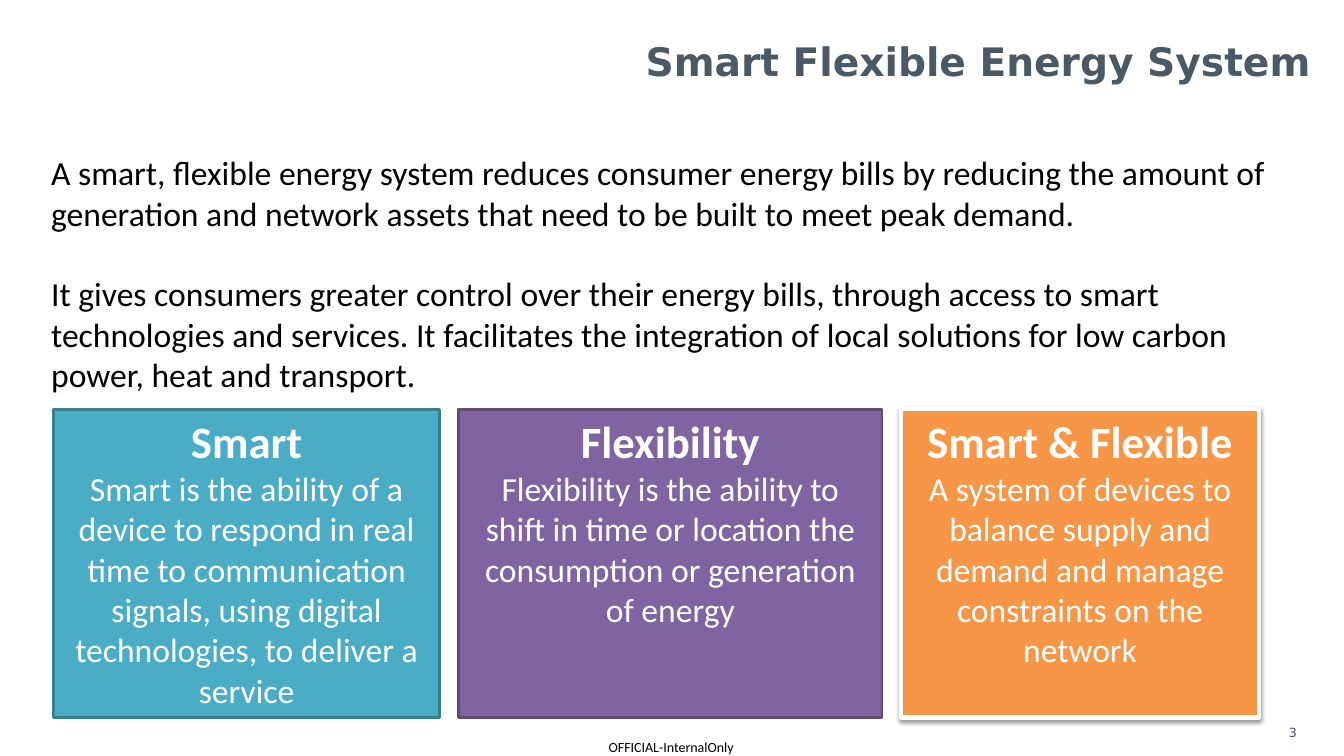
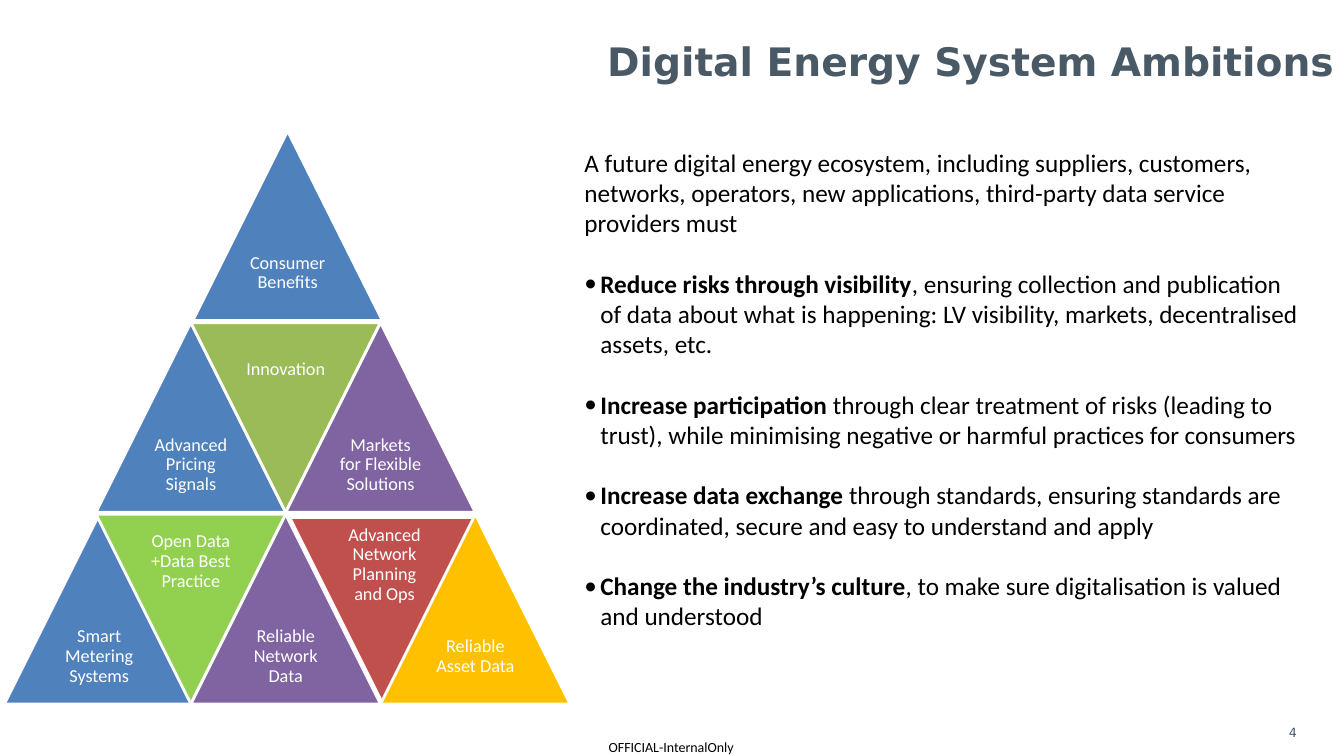
from dataclasses import dataclass
from itertools import accumulate

from lxml.etree import SubElement
from pptx import Presentation
from pptx.dml.color import RGBColor as RGB
from pptx.enum.shapes import MSO_SHAPE as SHAPE
from pptx.enum.text import MSO_ANCHOR as ANCHOR, PP_ALIGN as ALIGN
from pptx.oxml.ns import qn
from pptx.util import Cm, Pt


@dataclass(frozen=True)
class Theme:
    """Colours, fonts and type sizes shared by the slides."""
    body_font: str = "Calibri"
    title_font: str = "DejaVu Sans"
    black: str = "000000"
    white: str = "FFFFFF"
    slate: str = "495965"
    teal: str = "4BACC6"
    teal_edge: str = "377F92"
    purple: str = "8064A2"
    purple_edge: str = "5F4A78"
    orange: str = "F79646"
    blue: str = "4F81BD"
    green: str = "9BBB59"
    lime: str = "92D050"
    red: str = "C0504D"
    amber: str = "FFC000"
    title: int = 28
    heading: int = 32
    lead: int = 24
    body: int = 18
    label: int = 13
    footer: int = 10
    number: int = 9


T = Theme()

INTRO = [
    "A smart, flexible energy system reduces consumer energy bills by reducing the amount of "
    "generation and network assets that need to be built to meet peak demand.",
    "It gives consumers greater control over their energy bills, through access to smart "
    "technologies and services. It facilitates the integration of local solutions for low carbon "
    "power, heat and transport.",
]

CARDS = [
    (9.73, T.teal, T.teal_edge, 2, "Smart",
     "Smart is the ability of a device to respond in real time to communication signals, "
     "using digital technologies, to deliver a service"),
    (10.67, T.purple, T.purple_edge, 2, "Flexibility",
     "Flexibility is the ability to shift in time or location the consumption or generation "
     "of energy"),
    (9.02, T.orange, T.white, 3, "Smart & Flexible",
     "A system of devices to balance supply and demand and manage constraints on the network"),
]

PYRAMID = [
    [("Consumer Benefits", T.blue, 0.05, 0)],
    [("Advanced Pricing Signals", T.blue, 0, 0),
     ("Innovation", T.green, 0, 0),
     ("Markets for Flexible Solutions", T.purple, 0, 0)],
    [("Smart Metering Systems", T.blue, 0.08, 0),
     ("Open Data +Data Best Practice", T.lime, 0, 0),
     ("Reliable Network Data", T.purple, 0, 0),
     ("Advanced Network Planning and Ops", T.red, 0.1, 0.08),
     ("Reliable Asset Data", T.amber, 0, 0)],
]

AMBITION = ("A future digital energy ecosystem, including suppliers, customers, networks, "
            "operators, new applications, third-party data service providers must")

AIMS = [
    ("Reduce risks through visibility",
     ", ensuring collection and publication of data about what is happening: LV visibility, "
     "markets, decentralised assets, etc."),
    ("Increase participation",
     " through clear treatment of risks (leading to trust), while minimising negative or "
     "harmful practices for consumers"),
    ("Increase data exchange",
     " through standards, ensuring standards are coordinated, secure and easy to understand "
     "and apply"),
    ("Change the industry’s culture",
     ", to make sure digitalisation is valued and understood"),
]


def style(font, size, color=T.black, bold=False, name=T.body_font):
    """Set the look of a font."""
    font.size, font.bold, font.name = Pt(size), bold, name
    font.color.rgb = RGB.from_string(color)


def add_text(shapes, box, paragraphs, size, color=T.black, bold=False, name=T.body_font,
             align=ALIGN.LEFT, anchor=ANCHOR.TOP, inset=None, gap=0):
    """Add a wrapping text box and return its text frame."""
    tf = shapes.add_textbox(*map(Cm, box)).text_frame
    tf.word_wrap, tf.vertical_anchor = True, anchor
    if inset is not None:
        tf.margin_left = tf.margin_right = tf.margin_top = tf.margin_bottom = Cm(inset)
    tf.text = "\n".join(paragraphs)
    for i, p in enumerate(tf.paragraphs):
        p.alignment = align
        if i:
            p.space_before = Pt(gap)
        for r in p.runs:
            style(r.font, size, color, bold, name)
    return tf


def add_panel(shapes, kind, box, fill, edge, width):
    """Add a filled, outlined shape without a shadow."""
    sp = shapes.add_shape(kind, *map(Cm, box))
    sp.fill.solid()
    sp.fill.fore_color.rgb = RGB.from_string(fill)
    sp.line.color.rgb = RGB.from_string(edge)
    sp.line.width = Pt(width)
    sp.shadow.inherit = False
    return sp


def add_shadow(sp):
    """Give a shape a soft shadow below it."""
    effects = sp._element.spPr.find(qn("a:effectLst"))
    shadow = SubElement(effects, qn("a:outerShdw"), blurRad=str(Pt(3.1)), dist=str(Pt(1.6)),
                        dir="5400000", rotWithShape="0")
    color = SubElement(shadow, qn("a:srgbClr"), val=T.black)
    SubElement(color, qn("a:alpha"), val="38000")


def add_card(s, left, width, fill, edge, line, heading, body):
    """Add a coloured card with a heading and a definition."""
    sp = add_panel(s.shapes, SHAPE.RECTANGLE, (left, 10.31, width, 7.77), fill, edge, line)
    tf = sp.text_frame
    tf.word_wrap, tf.vertical_anchor = True, ANCHOR.TOP
    tf.text = f"{heading}\n{body}"
    for p, size in zip(tf.paragraphs, (T.heading, T.lead)):
        p.alignment = ALIGN.CENTER
        style(p.runs[0].font, size, T.white, size == T.heading)
    return sp


def add_pyramid(s, left=0.03, top=3.3, side=4.78, step=4.83):
    """Add rows of alternating triangles with centred labels."""
    shapes, half = s.shapes.add_group_shape().shapes, side / 2
    for row, cells in enumerate(PYRAMID):
        for i, (label, fill, dx, dy) in enumerate(cells):
            x = left + (len(PYRAMID) - 1 - row + i) * half + dx
            y = top + row * step + dy
            inverted = i % 2 == 1
            sp = add_panel(shapes, SHAPE.ISOSCELES_TRIANGLE, (x, y, side, side),
                           fill, T.white, 2)
            sp.rotation = 180 if inverted else 0
            label_top = y if inverted else y + half
            tf = add_text(shapes, (x + half / 2, label_top, half, half), [label], T.label,
                          T.white, align=ALIGN.CENTER, anchor=ANCHOR.MIDDLE, inset=0.14)
            tf.paragraphs[0].line_spacing = 0.9


def add_aim(tf, lead, rest, hang=0.4):
    """Add a bullet with a bold lead-in."""
    p = tf.add_paragraph()
    pPr = p._p.get_or_add_pPr()
    pPr.set("marL", str(Cm(hang)))
    pPr.set("indent", str(-Cm(hang)))
    SubElement(pPr, qn("a:buFont"), typeface=T.body_font)
    SubElement(pPr, qn("a:buChar"), char="•")
    p.space_before = Pt(1.2 * T.body)
    for text, bold in ((lead, True), (rest, False)):
        r = p.add_run()
        r.text = text
        style(r.font, T.body, bold=bold)


def add_slide(prs, title, number, title_right):
    """Add a slide with its title, footer and number."""
    s = prs.slides.add_slide(prs.slide_layouts[6])
    add_text(s.shapes, (title_right - 22.23, 0.8, 22.23, 1.46), [title], T.title, T.slate, True,
             T.title_font, ALIGN.RIGHT, ANCHOR.MIDDLE)
    add_text(s.shapes, (15.34, 18.62, 3.5, 0.43), ["OFFICIAL-InternalOnly"], T.footer, inset=0)
    add_text(s.shapes, (32.23, 18.14, 1.5, 0.74), [str(number)], T.number, T.slate,
             name=T.title_font)
    return s


def add_system_slide(prs):
    """Build the slide that defines smart and flexible."""
    s = add_slide(prs, "Smart Flexible Energy System", 3, 33.27)
    add_text(s.shapes, (1.04, 3.71, 32, 6.4), INTRO, T.lead, gap=1.2 * T.lead)
    gap = 0.48
    lefts = accumulate((card[0] + gap for card in CARDS), initial=1.35)
    cards = [add_card(s, left, *card) for left, card in zip(lefts, CARDS)]
    add_shadow(cards[-1])


def add_ambitions_slide(prs):
    """Build the slide with the pyramid and the aims."""
    s = add_slide(prs, "Digital Energy System Ambitions", 4, 33.86)
    add_pyramid(s)
    tf = add_text(s.shapes, (14.48, 3.58, 18.55, 12.57), [AMBITION], T.body)
    for lead, rest in AIMS:
        add_aim(tf, lead, rest)


def main():
    """Build and save the presentation."""
    prs = Presentation()
    prs.slide_width, prs.slide_height = Cm(33.87), Cm(19.05)
    add_system_slide(prs)
    add_ambitions_slide(prs)
    prs.save("out.pptx")


if __name__ == "__main__":
    main()
